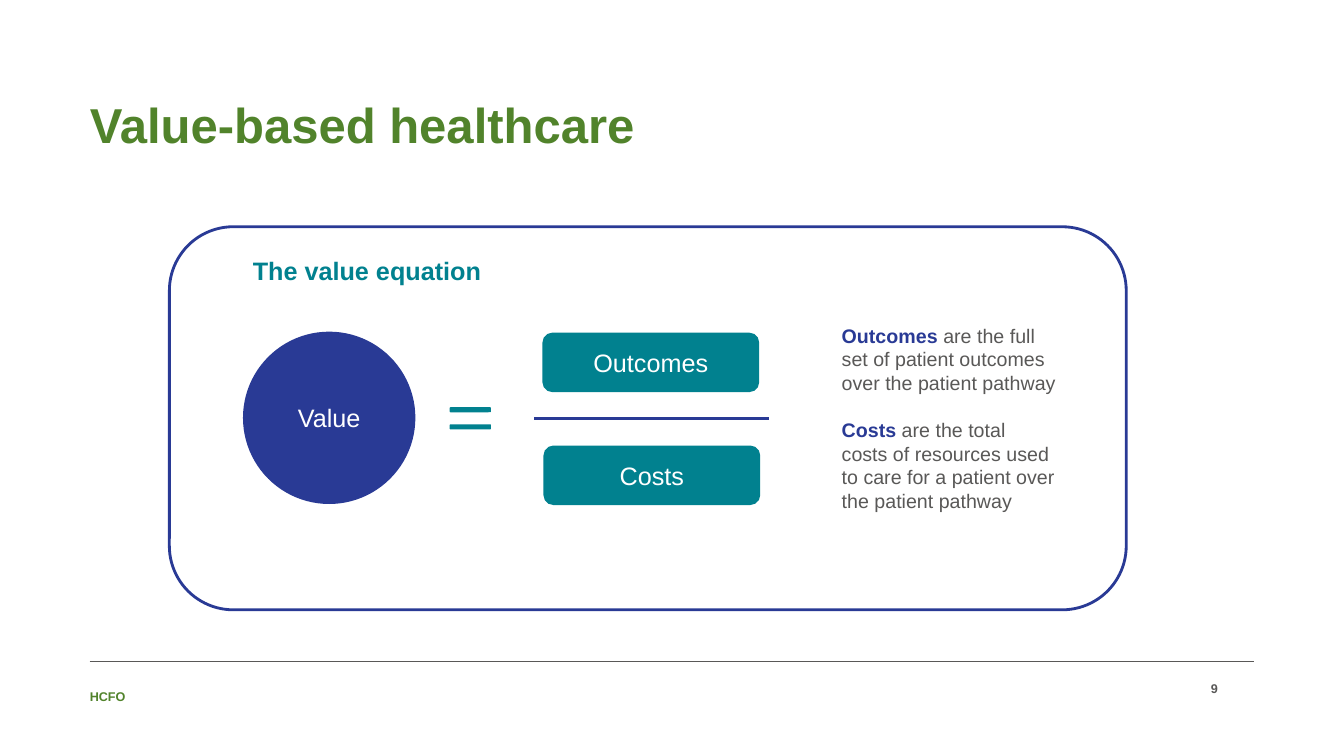
from lxml import etree
from pptx import Presentation
from pptx import util as u
from pptx.dml.color import RGBColor
from pptx.enum import shapes, text
from pptx.oxml.ns import qn

PX = 9144  # EMU per px, 100 px to the inch
FONT = "Arial"
COLOURS = {
    "green": "51832B",
    "navy": "293A95",
    "teal": "01818F",
    "grey": "595857",
    "white": "FFFFFF",
}


def px(*lengths):
    return [u.Emu(length * PX) for length in lengths]


def colour(name):
    return RGBColor.from_string(COLOURS[name])


def add_run(paragraph, words, size, ink, bold=False):
    run = paragraph.add_run()
    run.text = words
    run.font.name = FONT
    run.font.size = u.Pt(size)
    run.font.bold = bold
    run.font.color.rgb = colour(ink)


def add_shape(slide, kind, box, fill, outline=None, label=None):
    shape = slide.shapes.add_shape(kind, *px(*box))
    shape.shadow.inherit = False
    shape.fill.solid()
    shape.fill.fore_color.rgb = colour(fill)
    if outline:
        shape.line.color.rgb = colour(outline)
        shape.line.width = u.Pt(2)
    else:
        shape.line.fill.background()
    if label:
        shape.text_frame.vertical_anchor = text.MSO_ANCHOR.MIDDLE
        paragraph = shape.text_frame.paragraphs[0]
        paragraph.alignment = text.PP_ALIGN.CENTER
        add_run(paragraph, label, 18, "white")
    return shape


def add_line(slide, start, end, ink, width):
    line = slide.shapes.add_connector(
        shapes.MSO_CONNECTOR.STRAIGHT, *px(*start, *end))
    line.line.color.rgb = colour(ink)
    line.line.width = u.Pt(width)
    etree.SubElement(line._element.spPr, qn("a:effectLst"))


def add_text(slide, box, paragraphs, anchor=text.MSO_ANCHOR.TOP,
             align=text.PP_ALIGN.LEFT, inset=True, gap=0):
    """Each paragraph is a list of (words, size, colour, bold) runs."""
    frame = slide.shapes.add_textbox(*px(*box)).text_frame
    frame.word_wrap = True
    frame.vertical_anchor = anchor
    if not inset:
        frame.margin_left = frame.margin_right = 0
        frame.margin_top = frame.margin_bottom = 0
    for index, runs in enumerate(paragraphs):
        paragraph = frame.add_paragraph() if index else frame.paragraphs[0]
        paragraph.alignment = align
        if index:
            paragraph.space_before = u.Pt(gap)
        for run in runs:
            add_run(paragraph, *run)


def add_frame(slide):
    # Title
    add_text(slide, (89, 93, 1155, 59),
             [[("Value-based healthcare", 35, "green", True)]],
             anchor=text.MSO_ANCHOR.BOTTOM, inset=False)
    # Footer rule, organisation and page number
    add_line(slide, (89, 656), (1244, 656), "grey", 0.25)
    middle = text.MSO_ANCHOR.MIDDLE
    add_text(slide, (89, 675, 315, 31), [[("HCFO", 9, "green", True)]],
             anchor=middle, inset=False)
    add_text(slide, (1156, 675, 52, 15), [[("9", 9, "grey", True)]],
             anchor=middle, align=text.PP_ALIGN.RIGHT, inset=False)


def add_equation(slide):
    rounded = shapes.MSO_SHAPE.ROUNDED_RECTANGLE
    # Panel and heading
    add_shape(slide, rounded, (168, 225, 949, 380), "white", outline="navy")
    add_text(slide, (241, 248, 263, 40),
             [[("The value equation", 18, "teal", True)]])
    # Left side and equals sign
    add_shape(slide, shapes.MSO_SHAPE.OVAL, (241, 329, 171, 171), "navy",
              label="Value")
    for top in (404, 421):
        add_shape(slide, rounded, (446, top, 41, 5), "teal")
    # Fraction
    for label, left, top in (("Outcomes", 538, 330), ("Costs", 539, 442)):
        add_shape(slide, rounded, (left, top, 215, 59), "teal", label=label)
    add_line(slide, (530, 415), (763, 415), "navy", 2)


def add_definitions(slide):
    definitions = (
        ("Outcomes",
         " are the full set of patient outcomes over the patient pathway"),
        ("Costs",
         " are the total costs of resources used to care for a patient"
         " over the patient pathway"),
    )
    add_text(slide, (825, 316, 233, 199),
             [[(term, 14, "navy", True), (meaning, 14, "grey", False)]
              for term, meaning in definitions], gap=17)


def main():
    presentation = Presentation()
    presentation.slide_width, presentation.slide_height = px(1333, 750)
    slide = presentation.slides.add_slide(presentation.slide_layouts[6])
    add_frame(slide)
    add_equation(slide)
    add_definitions(slide)
    presentation.save("out.pptx")


if __name__ == "__main__":
    main()
